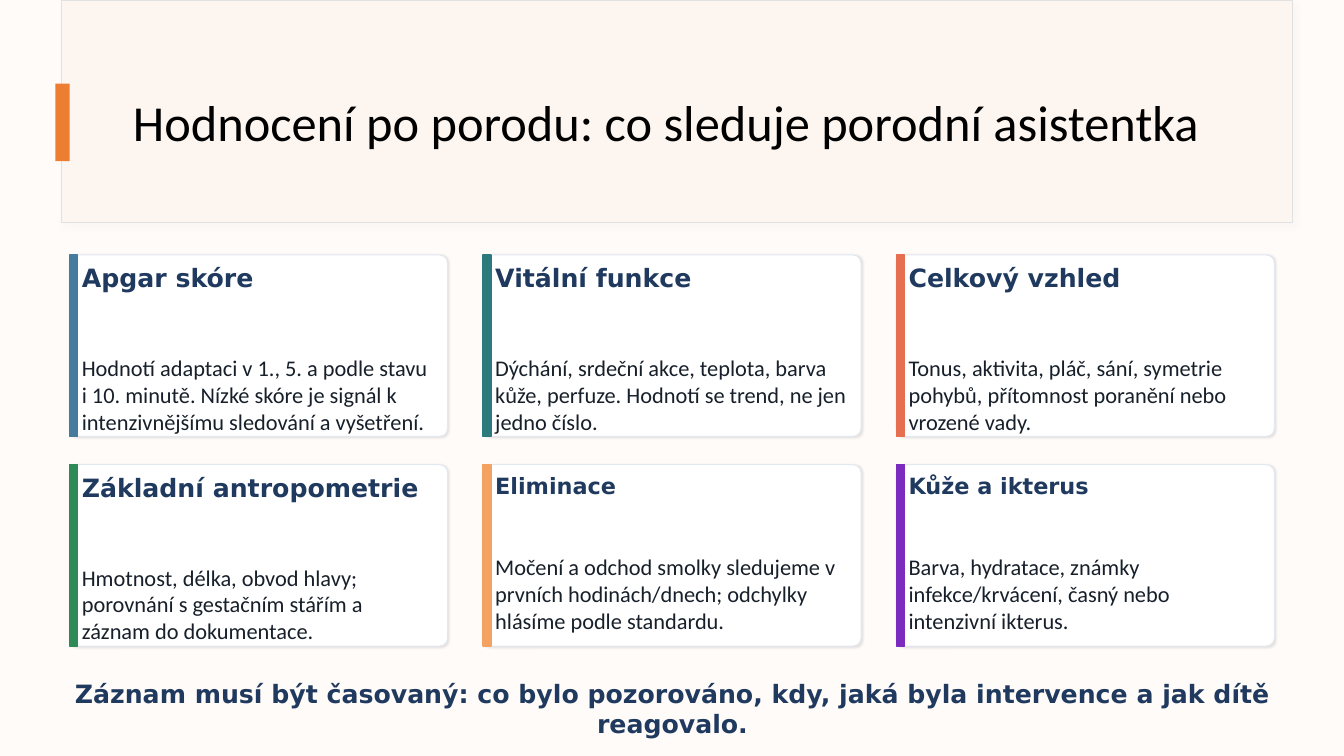
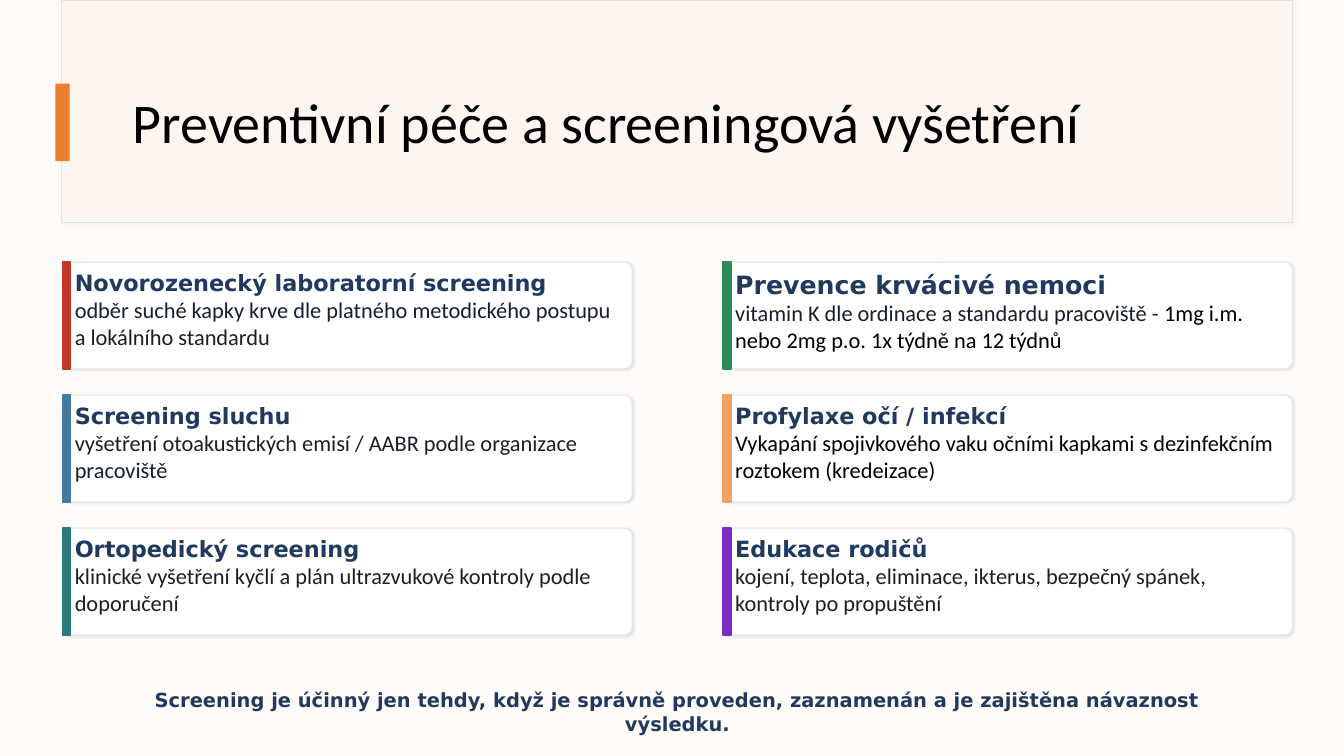
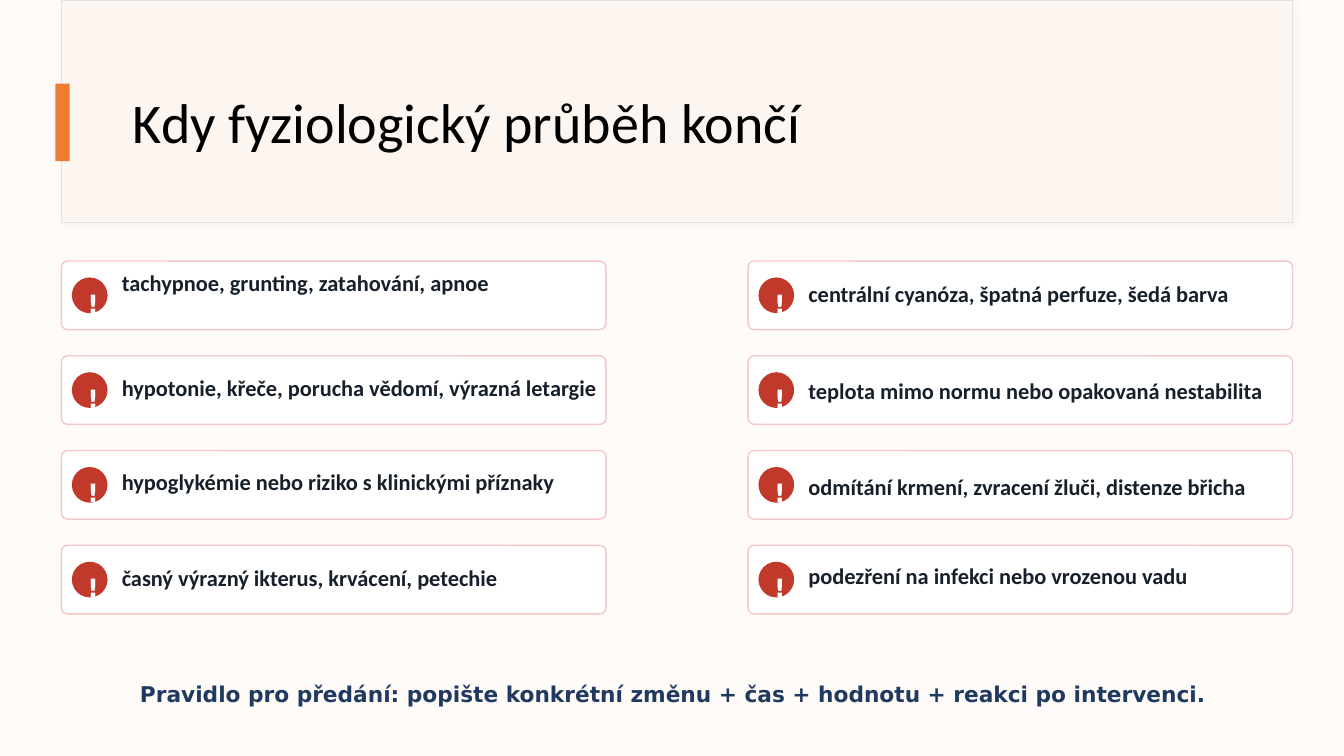
from lxml.etree import SubElement
from pptx import Presentation
from pptx.dml.color import RGBColor
from pptx.enum.shapes import MSO_SHAPE
from pptx.enum.text import MSO_ANCHOR, PP_ALIGN
from pptx.oxml.ns import qn
from pptx.util import Inches, Pt

BACKGROUND, HEADER, HEADER_LINE, ORANGE = "FFFBF9", "FDF5EF", "E1E1E1", "ED7D31"
WHITE, BLACK, NAVY, INK = "FFFFFF", "000000", "203A5F", "17202A"
CARD_LINE, ALERT_LINE, RED = "E2E8F0", "F5C6CB", "C0392B"
BLUE, TEAL, CORAL = "457B9D", "2C7A7B", "E76F51"
GREEN, SAND, PURPLE = "2E8B57", "F4A261", "7B2CBF"

TITLE = dict(name="Calibri", bold=False)
HEADING = dict(name="DejaVu Sans", bold=True)
BODY = dict(name="Calibri", size=Pt(16), bold=False)
LABEL = dict(name="Calibri", size=Pt(16), bold=True)
BADGE = dict(name="DejaVu Sans", size=Pt(18), bold=True)

# Cards: heading, heading size, accent colour, body spans (text, colour)
ASSESSMENT = {
    "title": ("Hodnocení po porodu: co sleduje porodní asistentka", 36),
    "grid": dict(columns=3, left=0.69, top=2.53, step_x=4.1, step_y=2.08,
                 width=3.75, height=1.8, radius=0.044, blank_lines=2),
    "cards": [
        ("Apgar skóre", 18, BLUE,
         [("Hodnotí adaptaci v 1., 5. a podle stavu i 10. minutě. Nízké skóre je "
           "signál k intenzivnějšímu sledování a vyšetření.", INK)]),
        ("Vitální funkce", 18, TEAL,
         [("Dýchání, srdeční akce, teplota, barva kůže, perfuze. Hodnotí se trend, "
           "ne jen jedno číslo.", INK)]),
        ("Celkový vzhled", 18, CORAL,
         [("Tonus, aktivita, pláč, sání, symetrie pohybů, přítomnost poranění nebo "
           "vrozené vady.", INK)]),
        ("Základní antropometrie", 18, GREEN,
         [("Hmotnost, délka, obvod hlavy; porovnání s gestačním stářím a záznam do "
           "dokumentace.", INK)]),
        ("Eliminace", 16, SAND,
         [("Močení a odchod smolky sledujeme v prvních hodinách/dnech; odchylky "
           "hlásíme podle standardu.", INK)]),
        ("Kůže a ikterus", 16, PURPLE,
         [("Barva, hydratace, známky infekce/krvácení, časný nebo intenzivní "
           "ikterus.", INK)]),
    ],
    "footer": ("Záznam musí být časovaný: co bylo pozorováno, kdy, jaká byla "
               "intervence a jak dítě reagovalo.", 18, (0.33, 6.73, 12.68, 0.6)),
}
SCREENING = {
    "title": ("Preventivní péče a screeningová vyšetření", 40),
    "grid": dict(columns=2, left=0.62, top=2.6, step_x=6.55, step_y=1.32,
                 width=5.65, height=1.06, radius=0.075, blank_lines=0),
    "cards": [
        ("Novorozenecký laboratorní screening", 16, RED,
         [("odběr suché kapky krve dle platného metodického postupu a lokálního "
           "standardu", INK)]),
        ("Prevence krvácivé nemoci", 18, GREEN,
         [("vitamin K dle ordinace a standardu pracoviště - ", INK),
          ("1mg i.m. nebo 2mg p.o. 1x týdně na 12 týdnů", BLACK)]),
        ("Screening sluchu", 16, BLUE,
         [("vyšetření otoakustických emisí / AABR podle organizace pracoviště", INK)]),
        ("Profylaxe očí / infekcí", 16, SAND,
         [("Vykapání spojivkového vaku očními kapkami s dezinfekčním roztokem "
           "(kredeizace)", BLACK)]),
        ("Ortopedický screening", 16, TEAL,
         [("klinické vyšetření kyčlí a plán ultrazvukové kontroly podle "
           "doporučení", INK)]),
        ("Edukace rodičů", 16, PURPLE,
         [("kojení, teplota, eliminace, ikterus, bezpečný spánek, kontroly po "
           "propuštění", INK)]),
    ],
    "footer": ("Screening je účinný jen tehdy, když je správně proveden, zaznamenán "
               "a je zajištěna návaznost výsledku.", 13.9, (1.12, 6.83, 11.2, 0.38)),
}
# Alerts: text, label offset from the top of its frame
WARNING_SIGNS = {
    "title": ("Kdy fyziologický průběh končí", 40),
    "alerts": [
        [("tachypnoe, grunting, zatahování, apnoe", 0.03),
         ("hypotonie, křeče, porucha vědomí, výrazná letargie", 0.13),
         ("hypoglykémie nebo riziko s klinickými příznaky", 0.13),
         ("časný výrazný ikterus, krvácení, petechie", 0.14)],
        [("centrální cyanóza, špatná perfuze, šedá barva", 0.14),
         ("teplota mimo normu nebo opakovaná nestabilita", 0.16),
         ("odmítání krmení, zvracení žluči, distenze břicha", 0.17),
         ("podezření na infekci nebo vrozenou vadu", 0.12)],
    ],
    "footer": ("Pravidlo pro předání: popište konkrétní změnu + čas + hodnotu + "
               "reakci po intervenci.", 15.5, (1.07, 6.75, 11.2, 0.45)),
}


def colour(value):
    return RGBColor.from_string(value)


def add_span(para, text, text_colour, style):
    span = para.add_run()
    span.text = text
    for name, value in style.items():
        setattr(span.font, name, value)
    span.font.color.rgb = colour(text_colour)


def add_box(page, place, fill, line=None, line_width=0.75, kind=MSO_SHAPE.RECTANGLE):
    box = page.shapes.add_shape(kind, *map(Inches, place))
    box.shadow.inherit = False
    box.fill.solid()
    box.fill.fore_color.rgb = colour(fill)
    if line:
        box.line.color.rgb = colour(line)
        box.line.width = Pt(line_width)
    else:
        box.line.fill.background()
    box.text_frame.vertical_anchor = MSO_ANCHOR.TOP
    box.text_frame.paragraphs[0].alignment = PP_ALIGN.LEFT
    return box


def add_shadow(box, shade, alpha, blur, distance):
    """Cast a soft shadow to the lower right; alpha is in percent."""
    effects = box._element.spPr.find(qn("a:effectLst"))
    shadow = SubElement(effects, qn("a:outerShdw"), blurRad=str(Pt(blur)),
                        dist=str(Pt(distance)), dir="2700000", algn="tl",
                        rotWithShape="0")
    tint = SubElement(shadow, qn("a:srgbClr"), val=shade)
    SubElement(tint, qn("a:alpha"), val=str(alpha * 1000))


def add_text(page, place, text, text_colour, style):
    box = page.shapes.add_textbox(*map(Inches, place))
    box.text_frame.word_wrap = True
    add_span(box.text_frame.paragraphs[0], text, text_colour, style)
    return box.text_frame


def add_page(deck, content):
    """Add a slide with the shared background, header band, title and footer."""
    page = deck.slides.add_slide(deck.slide_layouts[6])
    page.background.fill.solid()
    page.background.fill.fore_color.rgb = colour(BACKGROUND)
    band = add_box(page, (0.61, 0, 12.21, 2.21), HEADER, HEADER_LINE)
    add_shadow(band, "D9D9D9", 12, 4, 3)

    text, size = content["title"]
    title = add_text(page, (1.22, 0.6, 11.12, 1.29), text, BLACK,
                     TITLE | {"size": Pt(size)})
    title.vertical_anchor = MSO_ANCHOR.MIDDLE
    title.paragraphs[0].line_spacing = 0.9
    add_box(page, (0.55, 0.83, 0.14, 0.77), ORANGE)

    text, size, place = content["footer"]
    footer = add_text(page, place, text, NAVY, HEADING | {"size": Pt(size)})
    footer.paragraphs[0].alignment = PP_ALIGN.CENTER
    for side in ("left", "top", "right", "bottom"):
        setattr(footer, f"margin_{side}", 0)
    return page


def add_cards(page, cards, grid):
    width, height = grid["width"], grid["height"]
    for index, (heading, size, accent, body) in enumerate(cards):
        row, column = divmod(index, grid["columns"])
        left = grid["left"] + column * grid["step_x"]
        top = grid["top"] + row * grid["step_y"]
        card = add_box(page, (left, top, width, height), WHITE, CARD_LINE,
                       kind=MSO_SHAPE.ROUNDED_RECTANGLE)
        card.adjustments[0] = grid["radius"]
        add_shadow(card, BLACK, 10, 1.5, 0.5)
        frame = card.text_frame
        add_span(frame.paragraphs[0], heading, NAVY, HEADING | {"size": Pt(size)})
        para = frame.add_paragraph()
        para.alignment = PP_ALIGN.LEFT
        para.space_before = Pt(round(grid["blank_lines"] * size * 1.22))
        for text, text_colour in body:
            add_span(para, text, text_colour, BODY)
        add_box(page, (left, top, 0.08, height), accent, accent, 1)


def add_alerts(page, columns):
    for column, alerts in enumerate(columns):
        left = 0.61 + column * 6.81
        for row, (text, label_top) in enumerate(alerts):
            top = 2.59 + row * 0.94
            frame = add_box(page, (left, top, 5.4, 0.68), WHITE, ALERT_LINE, 1,
                            MSO_SHAPE.ROUNDED_RECTANGLE)
            frame.adjustments[0] = 0.088
            badge = add_box(page, (left + 0.11, top + 0.17, 0.34, 0.34), RED, RED, 1,
                            MSO_SHAPE.OVAL)
            mark = badge.text_frame.paragraphs[0]
            mark.alignment = PP_ALIGN.CENTER
            add_span(mark, "!", WHITE, BADGE)
            add_text(page, (left + 0.5, top + label_top, 5.1, 0.37), text, INK, LABEL)


def main():
    deck = Presentation()
    deck.slide_width, deck.slide_height = Inches(13.33), Inches(7.5)
    for content in (ASSESSMENT, SCREENING):
        add_cards(add_page(deck, content), content["cards"], content["grid"])
    add_alerts(add_page(deck, WARNING_SIGNS), WARNING_SIGNS["alerts"])
    deck.save("out.pptx")


if __name__ == "__main__":
    main()
